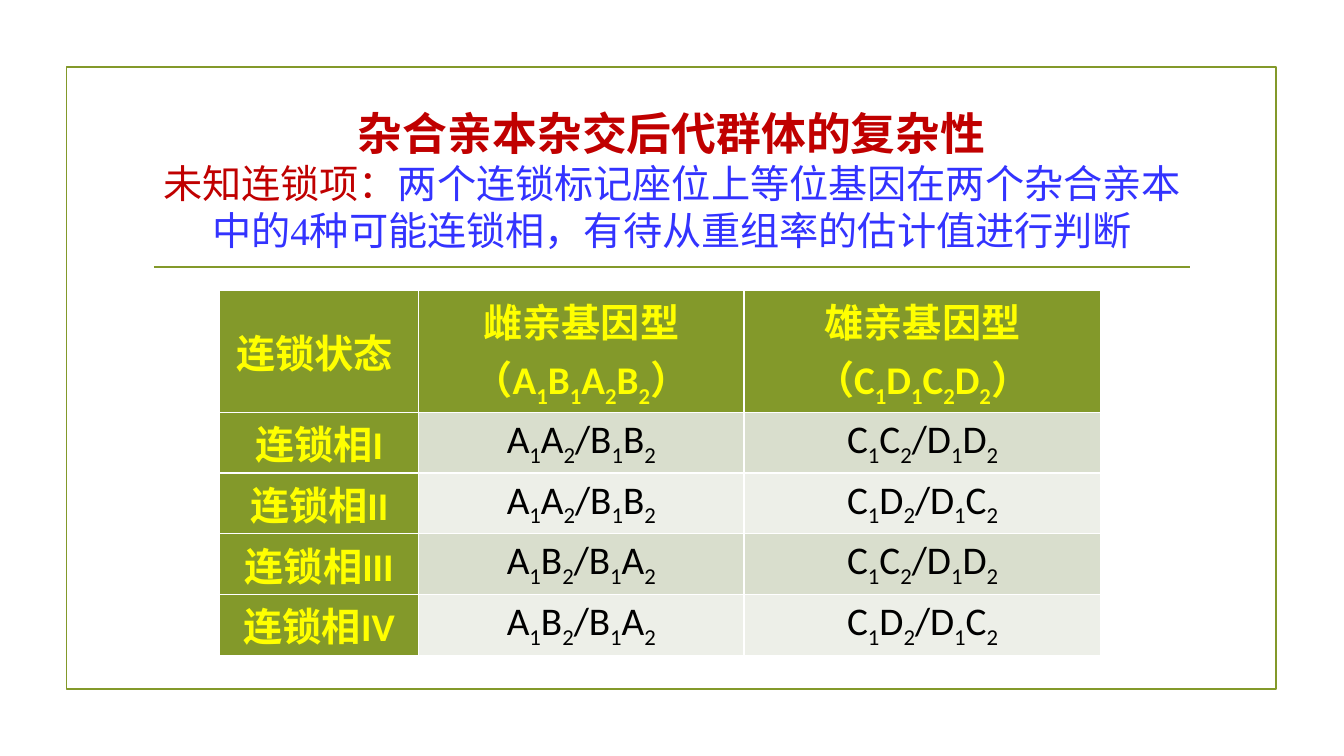
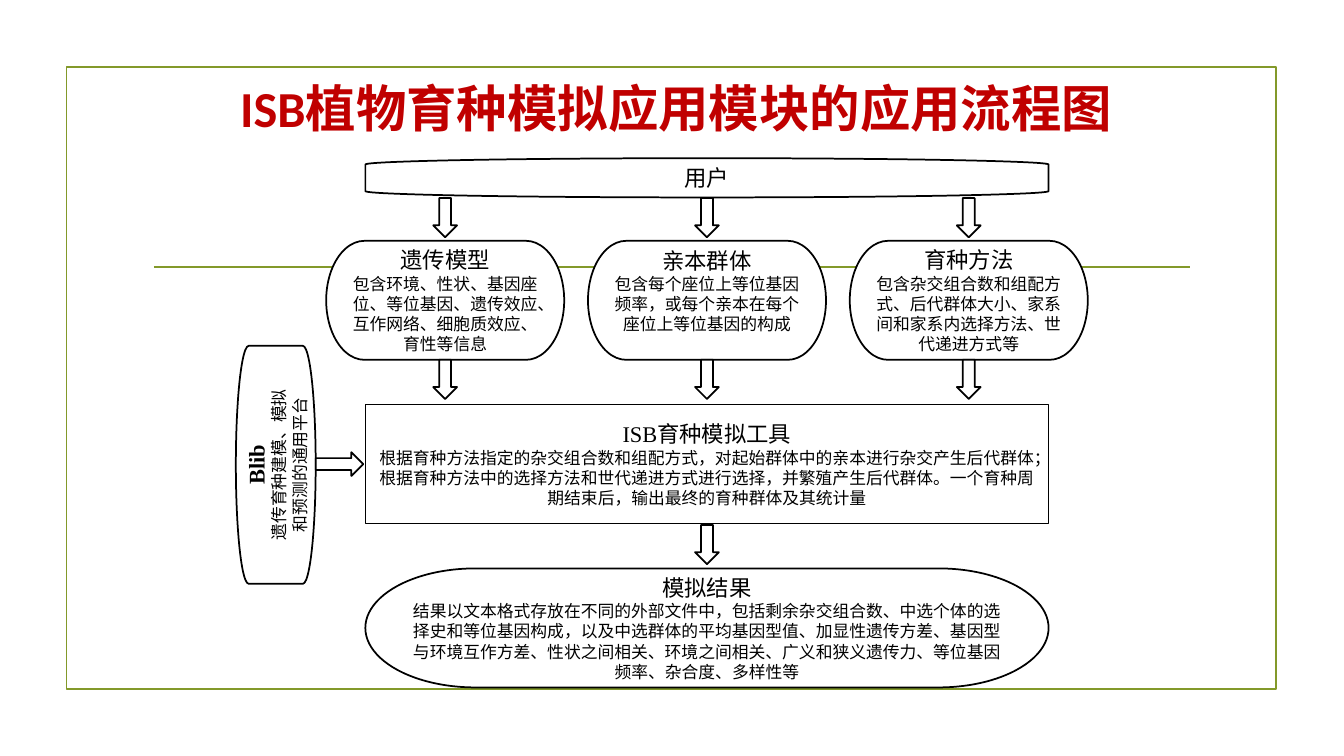
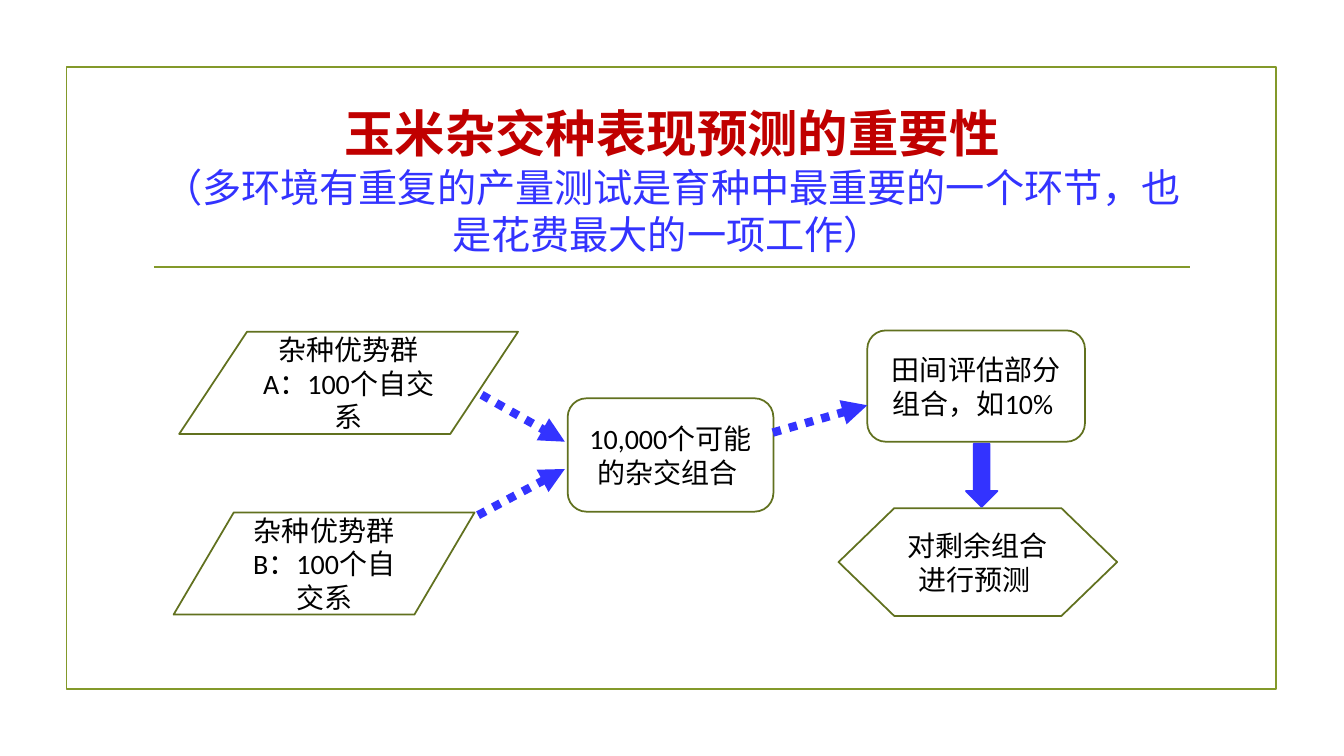
import itertools
import pptx
import pptx.util
import pptx.dml.color
import pptx.enum.dml
import pptx.enum.shapes
import pptx.enum.text
import pptx.oxml.ns
import lxml.etree

Pt = pptx.util.Pt
RGB = pptx.dml.color.RGBColor
KIND = pptx.enum.shapes.MSO_SHAPE
LINE = pptx.enum.shapes.MSO_CONNECTOR.STRAIGHT
MIDDLE = pptx.enum.text.MSO_ANCHOR.MIDDLE
CENTER = pptx.enum.text.PP_ALIGN.CENTER
qn = pptx.oxml.ns.qn

OLIVE = RGB(0x83, 0x99, 0x2A)
MOSS = RGB(0x61, 0x71, 0x1F)
BANDS = RGB(0xD9, 0xDE, 0xCD), RGB(0xED, 0xEF, 0xE8)
RED = RGB(0xC0, 0x00, 0x00)
BLUE = RGB(0x33, 0x33, 0xFF)
YELLOW = RGB(0xFF, 0xFF, 0x00)
BLACK = RGB(0x00, 0x00, 0x00)
WHITE = RGB(0xFF, 0xFF, 0xFF)
SANS, SERIF, CJK = "Calibri", "Times New Roman", "Noto Sans CJK SC"


def style(font, size, color, bold=False, name=None):
    font.size, font.bold = Pt(size), bold
    font.color.rgb = color
    if name:
        font.name = name


def link(shapes, x1, y1, x2, y2, color, width):
    line = shapes.add_connector(LINE, Pt(x1), Pt(y1), Pt(x2), Pt(y2))
    line.line.color.rgb, line.line.width = color, Pt(width)
    props = line.element.find(qn("p:spPr"))
    lxml.etree.SubElement(props, qn("a:effectLst"))
    return line


def block(shapes, kind, box, fill, edge):
    shape = shapes.add_shape(kind, *map(Pt, box))
    shape.shadow.inherit = False
    if fill is None:
        shape.fill.background()
    else:
        shape.fill.solid()
        shape.fill.fore_color.rgb = fill
    shape.line.color.rgb, shape.line.width = edge, Pt(1.25)
    return shape


def label(shape, lines, inset=None):
    """Write (text, size, font, bold) lines centred in the shape."""
    frame = shape.text_frame
    frame.word_wrap, frame.vertical_anchor = True, MIDDLE
    if inset:
        frame.margin_left = frame.margin_right = Pt(inset)
        frame.margin_top = frame.margin_bottom = Pt(inset)
    for i, (text, size, name, bold) in enumerate(lines):
        para = frame.add_paragraph() if i else frame.paragraphs[0]
        para.text, para.alignment = text, CENTER
        style(para.font, size, BLACK, bold, name)


def theme(deck):
    """Put the frame, the rule and the title box on the layout."""
    layout = deck.slide_layouts[5]
    slide = deck.slides.add_slide(layout)
    frame = block(slide.shapes, KIND.RECTANGLE, (47.5, 48, 864, 444), None, OLIVE)
    rule = link(slide.shapes, 110, 190.8, 850, 190.8, OLIVE, 1.25)
    for part in frame, rule:
        layout.shapes.element.append(part.element)
    title = next(s for s in layout.placeholders if s.placeholder_format.idx == 0)
    place(title, 102, 77, 756, 103)
    return layout, slide


def place(shape, *box):
    shape.left, shape.top, shape.width, shape.height = map(Pt, box)


def head(slide, name, first, *rest):
    """Title line in red, then a lighter line of (text, colour) parts."""
    frame = slide.shapes.title.text_frame
    frame.auto_size = pptx.enum.text.MSO_AUTO_SIZE.NONE
    frame.vertical_anchor = MIDDLE
    para = frame.paragraphs[0]
    para.alignment = CENTER
    text, size = first
    style(para.font, 28 if rest else size, RED, not rest, name)
    run = para.add_run()
    run.text = text
    if rest:
        style(run.font, size, RED, True)
        para.add_line_break()
    for text, color in rest:
        run = para.add_run()
        run.text = text
        run.font.color.rgb = color


def gene(para, text):
    """Write the text with its digits as subscripts."""
    for low, part in itertools.groupby(text, str.isdigit):
        run = para.add_run()
        run.text = "".join(part)
        if low:
            run.font._element.set("baseline", "-25000")


def phases(slide, left, top):
    rows = [
        ("连锁状态 ", "雌亲基因型（A1B1A2B2）", "雄亲基因型（C1D1C2D2）"),
        ("连锁相I", "A1A2/B1B2", "C1C2/D1D2"),
        ("连锁相II", "A1A2/B1B2", "C1D2/D1C2"),
        ("连锁相III", "A1B2/B1A2", "C1C2/D1D2"),
        ("连锁相IV", "A1B2/B1A2", "C1D2/D1C2"),
    ]
    widths, heights = (142, 232.5, 255), (87, 43.4, 43.4, 43.4, 43.4)
    table = slide.shapes.add_table(
        len(rows), len(widths), Pt(left), Pt(top), Pt(sum(widths)), Pt(sum(heights))
    ).table
    for col, width in zip(table.columns, widths):
        col.width = Pt(width)
    for i, (row, height) in enumerate(zip(rows, heights)):
        table.rows[i].height = Pt(height)
        for j, text in enumerate(row):
            cell = table.cell(i, j)
            key = i == 0 or j == 0
            cell.fill.solid()
            cell.fill.fore_color.rgb = OLIVE if key else BANDS[(i + 1) % 2]
            cell.vertical_anchor = MIDDLE
            cell.margin_left = cell.margin_right = Pt(5)
            cell.margin_top = cell.margin_bottom = 0
            para = cell.text_frame.paragraphs[0]
            para.alignment = CENTER
            style(para.font, 28, YELLOW if key else BLACK, key, SANS)
            gene(para, text)


def step(slide, kind, box, name, note, bold=False):
    shape = block(slide.shapes, kind, box, WHITE, BLACK)
    label(shape, [(name, 16, SERIF, bold), (note, 12, SERIF, False)], 6)
    return shape


def turn(shape, way):
    shape.text_frame._txBody.bodyPr.set("vert", way)


def flow(slide, left, top):
    """Chart of the simulation steps; left and top are those of the user bar."""
    wide, high, small = 488, 85, 170
    mid, pitch = left + wide / 2, 187
    pill = KIND.FLOWCHART_TERMINATOR

    def arrow(x, y):
        box = (x - 8.5, top + y, 17, 28)
        block(slide.shapes, KIND.DOWN_ARROW, box, WHITE, BLACK)

    step(slide, KIND.FLOWCHART_PROCESS, (left, top + 176, wide, high), "ISB育种模拟工具",
         "根据育种方法指定的杂交组合数和组配方式，对起始群体中的亲本进行杂交产生后代群体；"
         "根据育种方法中的选择方法和世代递进方式进行选择，并繁殖产生后代群体。"
         "一个育种周期结束后，输出最终的育种群体及其统计量")
    inputs = [
        ("遗传模型", "包含环境、性状、基因座位、等位基因、遗传效应、互作网络、细胞质效应、育性等信息", 6),
        ("亲本群体", "包含每个座位上等位基因频率，或每个亲本在每个座位上等位基因的构成", 20),
        ("育种方法", "包含杂交组合数和组配方式、后代群体大小、家系间和家系内选择方法、世代递进方式等", 6),
    ]
    for i, (name, note, foot) in enumerate(inputs):
        x = mid + (i - 1) * pitch
        shape = step(slide, pill, (x - small / 2, top + 59, small, high), name, note)
        shape.text_frame.margin_bottom = Pt(foot)
        arrow(x, 144)
    step(slide, pill, (left, top + 293, wide, high), "模拟结果",
         "结果以文本格式存放在不同的外部文件中，包括剩余杂交组合数、中选个体的选择史和等位基因构成，"
         "以及中选群体的平均基因型值、加显性遗传方差、基因型与环境互作方差、性状之间相关、"
         "环境之间相关、广义和狭义遗传力、等位基因频率、杂合度、多样性等")
    arrow(mid, 262)
    base = step(slide, pill, (left - 92.5, top + 134, 57, small), "Blib",
                "遗传育种建模、模拟和预测的通用平台", True)
    turn(base, "vert270")
    block(slide.shapes, KIND.RIGHT_ARROW, (left - 35.5, top + 210, 34, 17), WHITE, BLACK)
    user = block(slide.shapes, pill, (mid - 14, top + 14 - wide / 2, 28, wide), WHITE, BLACK)
    user.rotation = 270
    label(user, [("用户", 16, CJK, False)], 6)
    turn(user, "vert")
    for i in range(3):
        arrow(mid + (i - 1) * pitch, 28.5)


def cross(slide, left, top):
    """Chart of the crosses, placed from its left top corner."""
    skew, soft = KIND.FLOWCHART_DATA, KIND.FLOWCHART_ALTERNATE_PROCESS
    parts = [
        (skew, (4, 1, 242, 73), "杂种优势群A：100个自交系", SANS),
        (skew, (0, 130, 215, 73), "杂种优势群B：100个自交系", SANS),
        (soft, (281.5, 48.5, 147, 81), "10,000个可能的杂交组合 ", SANS),
        (soft, (495.5, 0, 155.5, 79.5), "田间评估部分组合，如10% ", SANS),
        (KIND.FLOWCHART_PREPARATION, (475, 127, 199, 77), "对剩余组合进行预测 ", CJK),
    ]
    for kind, (x, y, wide, high), text, name in parts:
        box = (left + x, top + y, wide, high)
        label(block(slide.shapes, kind, box, WHITE, MOSS), [(text, 20, name, False)])
    box = (left + 566, top + 81, 22.5, 45)
    block(slide.shapes, KIND.DOWN_ARROW, box, BLUE, BLUE)
    ends = [(220, 46, 279.5, 79.5), (217.5, 132, 279.5, 99), (428, 73, 495.5, 53.5)]
    for x1, y1, x2, y2 in ends:
        line = link(slide.shapes, left + x1, top + y1, left + x2, top + y2, BLUE, 6).line
        line.dash_style = pptx.enum.dml.MSO_LINE.ROUND_DOT
        lxml.etree.SubElement(line._ln, qn("a:tailEnd"), type="triangle")


def main():
    deck = pptx.Presentation()
    deck.slide_width, deck.slide_height = Pt(960), Pt(540)
    layout, slide = theme(deck)
    head(slide, SERIF, ("杂合亲本杂交后代群体的复杂性", 32), ("未知连锁项：", RED),
         ("两个连锁标记座位上等位基因在两个杂合亲本中的4种可能连锁相，有待从重组率的估计值进行判断", BLUE))
    phases(slide, 157, 207.5)

    slide = deck.slides.add_slide(layout)
    place(slide.shapes.title, 134, 49, 698, 56)
    head(slide, SANS, ("ISB植物育种模拟应用模块的应用流程图", 36))
    flow(slide, 261, 113)

    slide = deck.slides.add_slide(layout)
    head(slide, SERIF, ("玉米杂交种表现预测的重要性", 36),
         ("（多环境有重复的产量测试是育种中最重要的一个环节，也是花费最大的一项工作） ", BLUE))
    cross(slide, 124, 236)
    deck.save("out.pptx")


if __name__ == "__main__":
    main()
